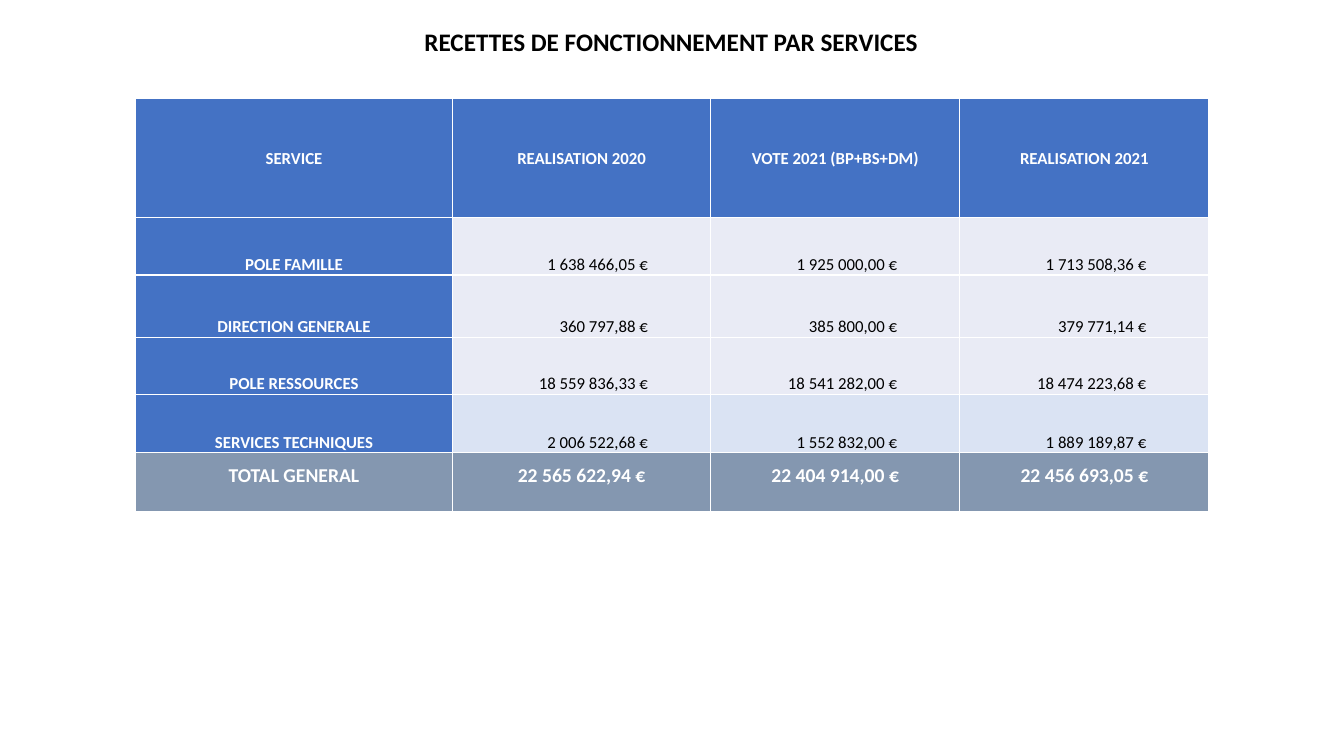
import pptx
import pptx.dml.color
import pptx.enum.text
import pptx.oxml
import pptx.oxml.ns
import pptx.util

Cm, Pt = pptx.util.Cm, pptx.util.Pt
ALIGN = pptx.enum.text.PP_ALIGN
ANCHOR = pptx.enum.text.MSO_ANCHOR

TITLE = "RECETTES DE FONCTIONNEMENT PAR SERVICES"
ROWS = [
    ("SERVICE", "REALISATION 2020", "VOTE 2021 (BP+BS+DM)", "REALISATION 2021"),
    ("POLE FAMILLE", "1 638 466,05 €", "1 925 000,00 €", "1 713 508,36 €"),
    ("DIRECTION GENERALE", "360 797,88 €", "385 800,00 €", "379 771,14 €"),
    ("POLE RESSOURCES", "18 559 836,33 €", "18 541 282,00 €", "18 474 223,68 €"),
    ("SERVICES TECHNIQUES", "2 006 522,68 €", "1 552 832,00 €", "1 889 189,87 €"),
    ("TOTAL GENERAL", "22 565 622,94 €", "22 404 914,00 €", "22 456 693,05 €"),
]
WIDTHS = [8, 6.5, 6.28, 6.28]
HEIGHTS = [3, 1.44, 1.57, 1.44, 1.47, 1.47]
LEFT, TOP = 3.41, 2.49
LAST = len(ROWS) - 1

BLUE, PALE, SKY, SLATE = "4472C4", "E9EBF5", "DAE3F3", "8497B0"
WHITE, BLACK = "FFFFFF", "000000"


def color(code):
    return pptx.dml.color.RGBColor.from_string(code)


def write(frame, text, size=12, ink=WHITE, bold=True, align=ALIGN.CENTER):
    para = frame.paragraphs[0]
    para.alignment = align
    run = para.add_run()
    run.text = text
    run.font.name = "Calibri"
    run.font.size = Pt(size)
    run.font.bold = bold
    run.font.color.rgb = color(ink)


def border(cell, code, width):
    """Draw the same line on all four sides of a cell."""
    props = cell._tc.get_or_add_tcPr()
    for spot, side in enumerate(("lnL", "lnR", "lnT", "lnB")):
        line = pptx.oxml.parse_xml(
            f'<a:{side} {pptx.oxml.ns.nsdecls("a")} w="{Pt(width)}">'
            f'<a:solidFill><a:srgbClr val="{code}"/></a:solidFill></a:{side}>')
        props.insert(spot, line)


def style(row, col):
    """Return the fill, text format, anchor, right and bottom margins."""
    if row == 0:
        return BLUE, {}, ANCHOR.MIDDLE, 0, 0
    if row == LAST:
        return SLATE, {"size": 14}, ANCHOR.BOTTOM, 0, 0.59
    if col == 0:
        return BLUE, {}, ANCHOR.BOTTOM, 0, 0
    fill = SKY if row == LAST - 1 else PALE
    form = {"ink": BLACK, "bold": False, "align": ALIGN.RIGHT}
    return fill, form, ANCHOR.BOTTOM, 1.58, 0


def main():
    deck = pptx.Presentation()
    deck.slide_width, deck.slide_height = Cm(33.87), Cm(19.05)
    slide = deck.slides.add_slide(deck.slide_layouts[6])

    frame = slide.shapes.add_table(
        len(ROWS), len(WIDTHS), Cm(LEFT), Cm(TOP),
        Cm(sum(WIDTHS)), Cm(sum(HEIGHTS)))
    table = frame.table
    table.first_row = table.horz_banding = False
    for col, width in enumerate(WIDTHS):
        table.columns[col].width = Cm(width)
    for row, texts in enumerate(ROWS):
        table.rows[row].height = Cm(HEIGHTS[row])
        for col, text in enumerate(texts):
            cell = table.cell(row, col)
            fill, form, anchor, right, bottom = style(row, col)
            cell.fill.solid()
            cell.fill.fore_color.rgb = color(fill)
            cell.vertical_anchor = anchor
            cell.margin_left = cell.margin_top = 0
            cell.margin_right, cell.margin_bottom = Cm(right), Cm(bottom)
            border(cell, WHITE, 1)
            write(cell.text_frame, text, **form)

    title = slide.shapes.add_textbox(Cm(2.31), Cm(0.53), Cm(29.21), Cm(1.02))
    title.text_frame.word_wrap = True
    write(title.text_frame, TITLE, size=18, ink=BLACK)

    deck.save("out.pptx")


if __name__ == "__main__":
    main()
